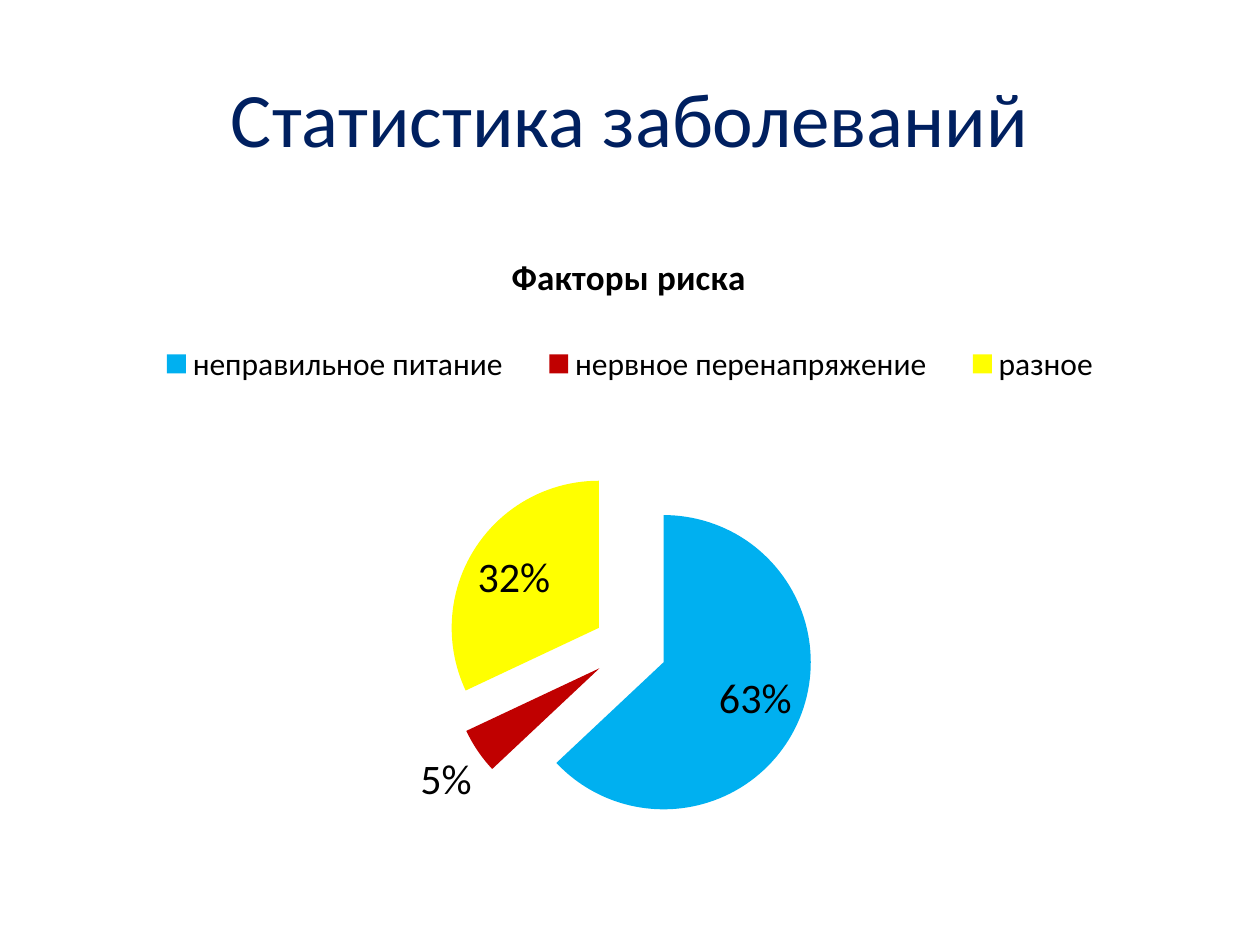
from lxml.etree import SubElement
from pptx import Presentation
from pptx.chart.data import CategoryChartData as ChartData
from pptx.dml.color import RGBColor
from pptx.enum.chart import XL_CHART_TYPE as ChartType
from pptx.enum.chart import XL_LABEL_POSITION as LabelPlace
from pptx.enum.chart import XL_LEGEND_POSITION as LegendPlace
from pptx.enum.text import MSO_ANCHOR as Anchor, PP_ALIGN as Align
from pptx.oxml import parse_xml
from pptx.oxml.ns import nsdecls, qn
from pptx.util import Inches, Pt

NAVY = RGBColor(0x00, 0x20, 0x60)
BLACK = RGBColor(0x00, 0x00, 0x00)
BLUE = RGBColor(0x00, 0xB0, 0xF0)
RED = RGBColor(0xC0, 0x00, 0x00)
YELLOW = RGBColor(0xFF, 0xFF, 0x00)


class SlideBuilder:
    """Holds the style and the slide being filled."""

    font_name = "Calibri"

    def __init__(self, page):
        self.page = page

    def style(self, font, size, color=BLACK, bold=False):
        formats = {"name": self.font_name, "size": Pt(size), "bold": bold}
        for name, value in formats.items():
            setattr(font, name, value)
        font.color.rgb = color

    def heading(self, text, area):
        box = self.page.shapes.add_textbox(*map(Inches, area))
        frame = box.text_frame
        for name, value in {"word_wrap": True, "vertical_anchor": Anchor.MIDDLE}.items():
            setattr(frame, name, value)
        para = frame.paragraphs[0]
        para.alignment = Align.CENTER
        span = para.add_run()
        span.text = text
        self.style(span.font, 44, NAVY)

    def place(self, element, index, **fractions):
        """Set a manual layout, in fractions of the chart area."""
        for old in element.findall(qn("c:layout")):
            element.remove(old)
        layout = parse_xml(f"<c:layout {nsdecls('c')}><c:manualLayout/></c:layout>")
        manual = layout[0]
        if element.tag == qn("c:plotArea"):
            SubElement(manual, qn("c:layoutTarget")).set("val", "inner")
        for axis in "xy":
            SubElement(manual, qn(f"c:{axis}Mode")).set("val", "edge")
        for name, value in fractions.items():
            SubElement(manual, qn(f"c:{name}")).set("val", str(value))
        element.insert(index, layout)

    def pie(self, title, slices, area):
        data = ChartData()
        data.categories = [name for name, _, _ in slices]
        data.add_series(title, [value for _, value, _ in slices])
        chart = self.page.shapes.add_chart(
            ChartType.PIE, *map(Inches, area), data).chart
        self.style(chart.font, 10)

        # Chart title
        frame = chart.chart_title.text_frame
        frame.text = title
        self.style(frame.paragraphs[0].runs[0].font, 20, bold=True)
        self.place(chart.chart_title._element, 1, x=0.39, y=0.04)

        # Legend
        chart.has_legend = True
        legend = chart.legend
        legend.position = LegendPlace.TOP
        legend.include_in_layout = False
        self.style(legend.font, 18)
        self.place(legend._element, 1, x=0.06, y=0.18, w=0.88, h=0.1)

        # Exploded slices
        plot = chart.plots[0]
        plot.vary_by_categories = True
        series = plot.series[0]
        explosion = parse_xml(f'<c:explosion {nsdecls("c")} val="25"/>')
        series._element.find(qn("c:tx")).addnext(explosion)
        for index, (_, _, color) in enumerate(slices):
            fill = series.points[index].format.fill
            fill.solid()
            fill.fore_color.rgb = color
        plot_area = chart._chartSpace.chart.plotArea
        self.place(plot_area, 0, x=0.09, y=0.39, w=0.82, h=0.59)

        # Percent labels
        labels = series.data_labels
        formats = {"show_percentage": True, "show_value": False,
                   "position": LabelPlace.BEST_FIT}
        for name, value in formats.items():
            setattr(labels, name, value)
        self.style(labels.font, 24)


def main():
    deck = Presentation()
    deck.slide_width, deck.slide_height = Inches(10), Inches(7.5)
    builder = SlideBuilder(deck.slides.add_slide(deck.slide_layouts[6]))

    builder.heading("Статистика заболеваний", (0.5, 0.3, 9, 1.25))
    builder.pie(
        "Факторы риска",
        [("неправильное питание", 63, BLUE),
         ("нервное перенапряжение", 5, RED),
         ("разное", 32, YELLOW)],
        (0.5, 1.75, 9, 4.95))
    deck.save("out.pptx")


if __name__ == "__main__":
    main()
